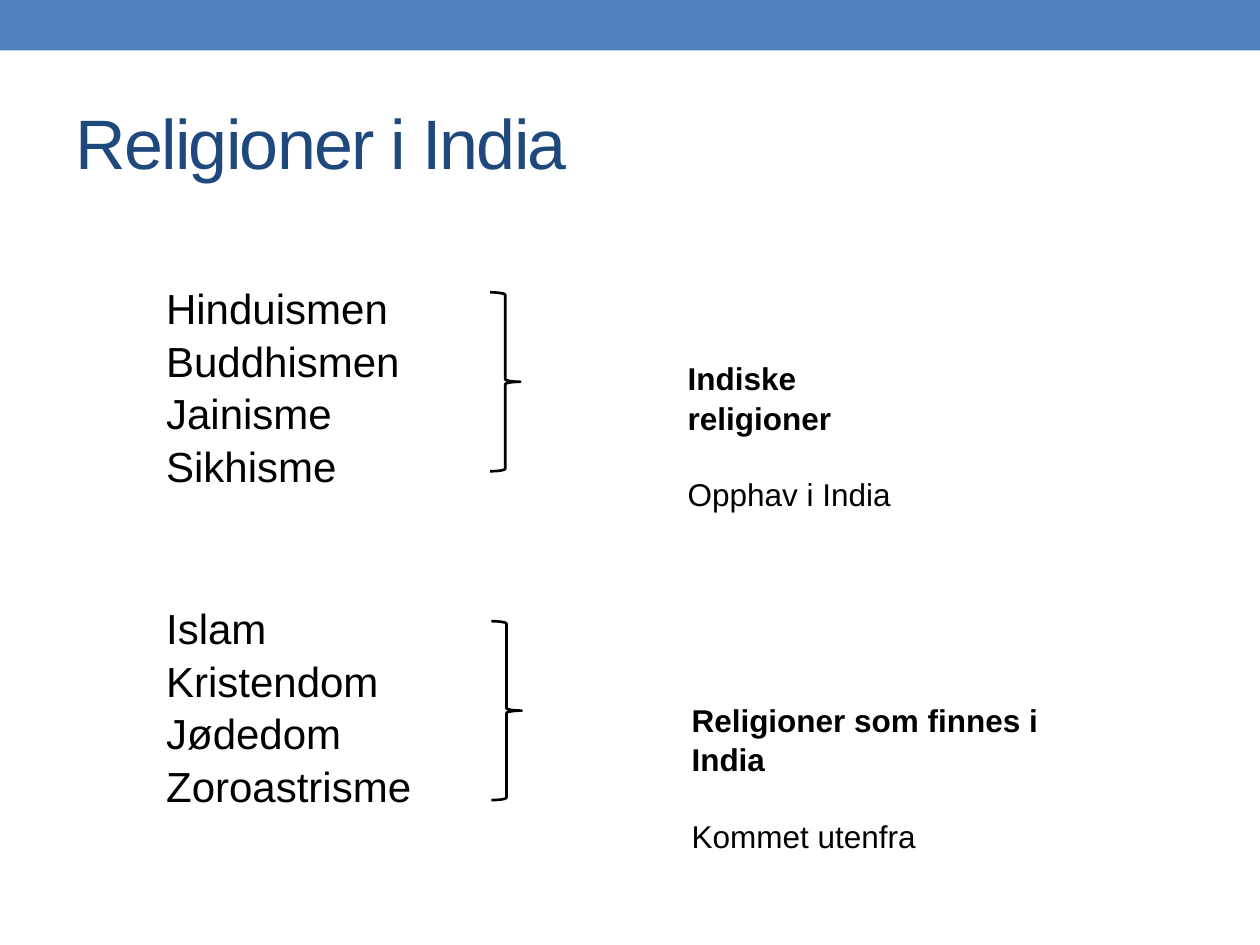
from pptx import Presentation
from pptx.dml.color import RGBColor
from pptx.enum.shapes import MSO_SHAPE
from pptx.enum.text import MSO_ANCHOR
from pptx.util import Inches, Pt

COLORS = {"bar": "4F81BD", "title": "1F497D", "text": "000000"}
FONT = "Arial"
LEADING = 1.04
TITLE = "Religioner i India"

# names, their box, brace corner, (heading, note), their box
GROUPS = [
    (["Hinduismen", "Buddhismen", "Jainisme", "Sikhisme"],
     (1.22, 2.18, 2.36, 1.72), (3.89, 2.32),
     ["Indiske religioner", "Opphav i India"], (5.36, 2.79, 2.2, 1.22)),
    (["Islam", "Kristendom", "Jødedom", "Zoroastrisme"],
     (1.22, 4.72, 2.21, 1.72), (3.9, 4.93),
     ["Religioner som finnes i India", "Kommet utenfra"],
     (5.39, 5.5, 3.15, 1.01)),
]
BRACE = (0.24, 1.42)


def color(name):
    return RGBColor.from_string(COLORS[name])


def add_text(slide, lines, box, size, tint="text"):
    frame = slide.shapes.add_textbox(*map(Inches, box)).text_frame
    frame.word_wrap = True
    frame.text = "\n".join(lines)
    for para in frame.paragraphs:
        for run in para.runs:
            run.font.name = FONT
            run.font.size = Pt(size)
            run.font.color.rgb = color(tint)
    return frame


def add_shape(slide, kind, box):
    shape = slide.shapes.add_shape(kind, *map(Inches, box))
    shape.shadow.inherit = False
    return shape


def add_title(slide):
    frame = add_text(slide, [TITLE], (0.5, 0.58, 9, 1.08), 40, "title")
    frame.vertical_anchor = MSO_ANCHOR.MIDDLE
    props = frame.paragraphs[0].runs[0].font._element
    props.set("spc", "-100")


def add_group(slide, names, box, corner, label, place):
    frame = add_text(slide, names, box, 24)
    for para in frame.paragraphs:
        para.line_spacing = LEADING

    brace = add_shape(slide, MSO_SHAPE.RIGHT_BRACE, corner + BRACE)
    brace.fill.background()
    brace.line.color.rgb = color("text")
    brace.line.width = Pt(1.5)

    head, note = add_text(slide, label, place, 18).paragraphs
    head.line_spacing = note.line_spacing = LEADING
    head.runs[0].font.bold = True
    note.space_before = Pt(21.5)


def main():
    deck = Presentation()
    deck.slide_width, deck.slide_height = Inches(10), Inches(7.5)
    slide = deck.slides.add_slide(deck.slide_layouts[6])

    bar = add_shape(slide, MSO_SHAPE.RECTANGLE, (0, 0, 10, 0.4))
    bar.fill.solid()
    bar.fill.fore_color.rgb = color("bar")
    bar.line.fill.background()

    add_title(slide)
    for group in GROUPS:
        add_group(slide, *group)
    deck.save("out.pptx")


if __name__ == "__main__":
    main()
